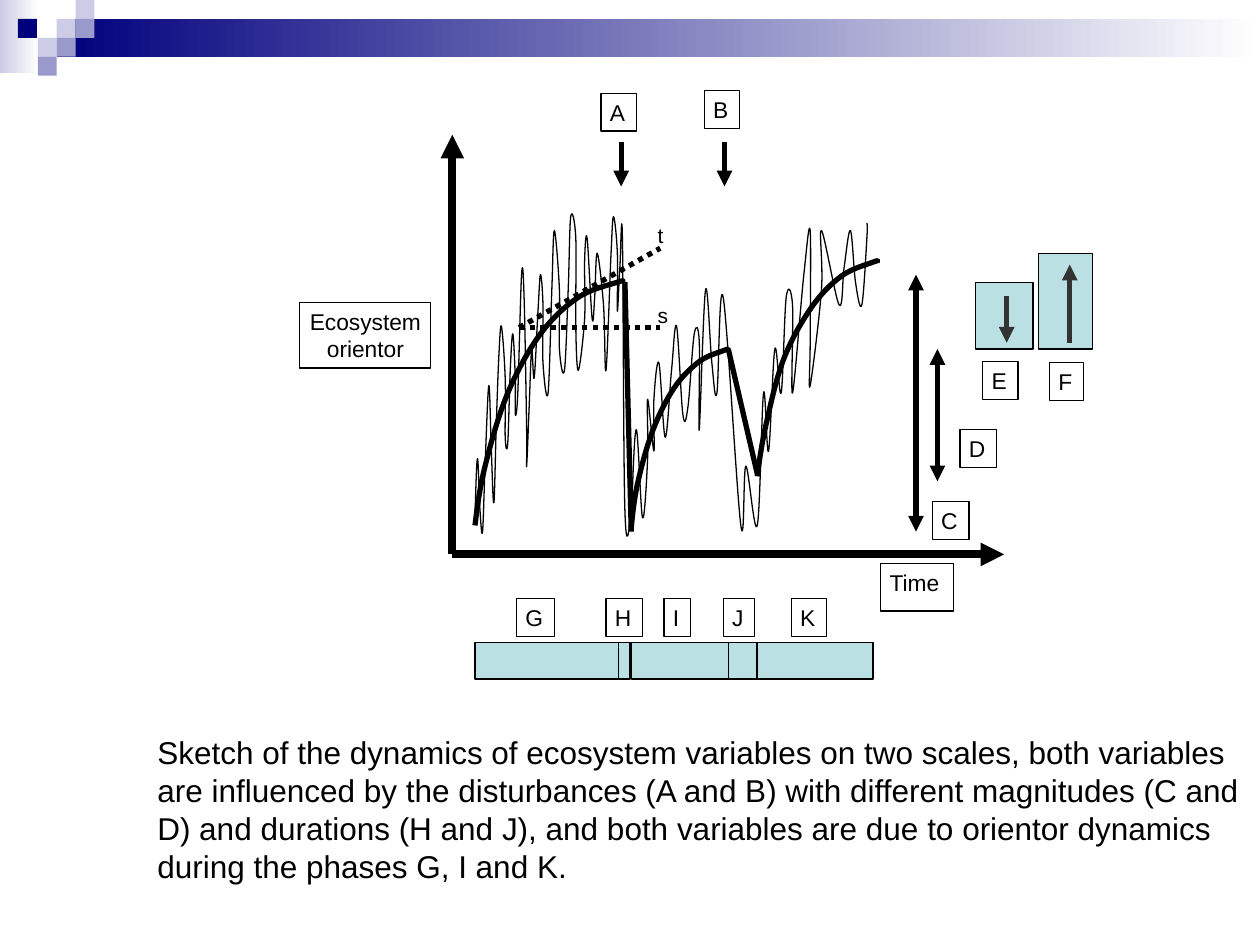
from dataclasses import dataclass

from lxml import etree
from pptx import Presentation
from pptx.dml.color import RGBColor
from pptx.enum.dml import MSO_LINE
from pptx.enum.shapes import MSO_CONNECTOR, MSO_SHAPE
from pptx.enum.text import PP_ALIGN
from pptx.oxml.ns import qn
from pptx.util import Inches, Pt

RECTANGLE, STRAIGHT = MSO_SHAPE.RECTANGLE, MSO_CONNECTOR.STRAIGHT
DOTTED, LEFT, CENTER = MSO_LINE.ROUND_DOT, PP_ALIGN.LEFT, PP_ALIGN.CENTER
COLORS = {"ink": "000000", "gray": "333333", "aqua": "BBE0E3", "white": "FFFFFF",
          "navy": "00007D", "violet": "9999CC", "lilac": "CCCCE6"}
CELL = Inches(0.1)  # the slide is a grid of 100 columns and 75 rows

# Curve knots as (column, row) within the plot box
FLUCTUATION_BEFORE = [
    (7.7, 31.1), (7.9, 26.4), (8.1, 30.5), (8.3, 32.2), (8.5, 27), (8.8, 20.6), (9, 25.8),
    (9.2, 29.9), (9.4, 23.5), (9.6, 18.2), (9.8, 15.9), (10.1, 20), (10.1, 24.7), (10.3, 25.2),
    (10.5, 19.4), (10.7, 16.5), (10.9, 20), (10.9, 22.9), (11.1, 21.2), (11.4, 11.8),
    (11.6, 13.6), (11.8, 24.1), (11.8, 27), (12, 22.3), (12.2, 17.7), (12.4, 20), (12.7, 14.7),
    (12.9, 11.8), (13.1, 14.2), (13.1, 18.8), (13.5, 21.2), (13.8, 13), (14, 8.3), (14.4, 13),
    (14.4, 17.7), (14.8, 19.4), (15.1, 13), (15.3, 7.2), (15.7, 8.9), (15.7, 15.9),
    (15.9, 19.4), (16.4, 15.3), (16.4, 10.7), (16.6, 8.9), (17, 15.3), (17.2, 13.6),
    (17.4, 10.1), (17.9, 14.2), (18.1, 19.4), (18.5, 10.1), (18.7, 7.2), (19, 10.1),
    (19, 14.7), (19.2, 11.2), (19.4, 8.9), (19.6, 30.5), (20.1, 30.5)]
FLUCTUATION_AFTER = [
    (20.1, 31.7), (20.5, 24.1), (21, 31.1), (21.4, 26.4), (21.4, 21.7), (21.9, 25.8),
    (21.9, 21.7), (22.3, 18.8), (22.8, 24.7), (23.3, 19.4), (23.7, 15.9), (24.2, 22.9),
    (24.6, 22.3), (25.1, 16.5), (25.5, 17.1), (25.5, 24.1), (26, 13), (26.5, 18.8),
    (26.9, 21.2), (27.4, 13.6), (28.8, 31.7), (29.2, 27), (30.1, 31.7), (30.6, 21.2),
    (31, 25.8), (31.5, 17.7), (32, 21.2), (32.4, 13.6), (32.9, 14.2), (32.9, 21.2),
    (33.8, 11.8), (34.3, 8.3), (34.3, 17.1), (34.3, 20.6), (35.2, 13), (35.2, 8.3),
    (36.6, 14.2), (37, 11.2), (37.5, 8.3), (37.9, 12.4), (38.4, 14.2), (38.8, 8.9),
    (38.8, 7.7)]
TRENDS = [
    [(7.7, 31.7), (8.5, 27), (10.3, 21.2), (12.9, 16.5), (15.9, 13.6), (19, 12.4), (19.4, 12.4)],
    [(20.1, 31.9), (20.6, 28.4), (21.8, 24.2), (23.5, 20.8), (25.5, 18.7), (27.5, 17.8),
     (27.7, 17.8)],
    [(30.1, 27.8), (30.8, 23.7), (32.2, 18.5), (34.4, 14.4), (36.8, 11.9), (39.3, 10.8),
     (39.6, 10.8)]]


@dataclass
class Region:
    """A part of the slide whose places are counted in grid cells from its corner."""
    shapes: object
    column: float
    row: float
    columns: float
    rows: float

    def point(self, column, row):
        return round((self.column + column) * CELL), round((self.row + row) * CELL)

    def frame(self, column, row, columns, rows):
        return *self.point(column, row), round(columns * CELL), round(rows * CELL)


def color(name):
    return RGBColor.from_string(COLORS[name])


def set_line(line, width, name="ink"):
    line.color.rgb = color(name)
    line.width = Pt(width)


def add_block(region, place, fill, fade=False, outline=True):
    shape = region.shapes.add_shape(RECTANGLE, *region.frame(*place))
    shape.shadow.inherit = False
    if fade:
        shape.fill.gradient()
        shape.fill.gradient_angle = 0
        for stop, name, position in zip(shape.fill.gradient_stops, (fill, "white"), (0, 1)):
            stop.color.rgb = color(name)
            stop.position = position
    else:
        shape.fill.solid()
        shape.fill.fore_color.rgb = color(fill)
    if outline:
        set_line(shape.line, 0.75)
    else:
        shape.line.fill.background()


def add_text(region, place, lines, size=13, boxed=True, align=LEFT, wrap=False):
    shape = region.shapes.add_textbox(*region.frame(*place))
    frame = shape.text_frame
    side, edge = (0.07, 0.04) if boxed else (0.1, 0.05)
    layout = {"word_wrap": wrap, "margin_left": Inches(side), "margin_right": Inches(side),
              "margin_top": Inches(edge), "margin_bottom": Inches(edge)}
    for name, value in layout.items():
        setattr(frame, name, value)
    if boxed:
        set_line(shape.line, 0.75)
    frame.text = "\n".join(lines)
    for paragraph in frame.paragraphs:
        paragraph.alignment = align
        for name, value in {"name": "Arial", "size": Pt(size)}.items():
            setattr(paragraph.font, name, value)
        paragraph.font.color.rgb = color("ink")


def add_line(region, start, end, width=3, name="ink", heads=(), dash=None):
    connector = region.shapes.add_connector(STRAIGHT, *region.point(*start), *region.point(*end))
    set_line(connector.line, width, name)
    if dash:
        connector.line.dash_style = dash
    properties = connector._element.spPr
    for head in heads:
        etree.SubElement(properties.find(qn("a:ln")), qn(f"a:{head}"), type="triangle")
    etree.SubElement(properties, qn("a:effectLst"))


def middle(first, second):
    return tuple((a + b) / 2 for a, b in zip(first, second))


def bezier_points(knots):
    """Two control points and an end for each span, with Catmull-Rom tangents."""
    tangents = [tuple((c - a) / 6 for a, c in zip(*pair)) for pair in zip(knots, knots[2:])]
    leaving = [tuple(map(sum, zip(*pair))) for pair in zip(knots[1:], tangents)]
    arriving = [tuple(k - t for k, t in zip(*pair)) for pair in zip(knots[1:], tangents)]
    leaving.insert(0, middle(knots[0], arriving[0]))
    arriving.append(middle(leaving[-1], knots[-1]))
    return [point for span in zip(leaving, arriving, knots[1:]) for point in span]


def add_curve(region, knots, width):
    builder = region.shapes.build_freeform(*region.point(*knots[0]))
    builder.add_line_segments([region.point(*p) for p in bezier_points(knots)], close=False)
    shape = builder.convert_to_shape()
    # Join every three line segments into one cubic curve
    segments = list(shape._element.iter(qn("a:lnTo")))
    for first, second, third in zip(segments[::3], segments[1::3], segments[2::3]):
        curve = etree.Element(qn("a:cubicBezTo"))
        first.addprevious(curve)
        for segment in (first, second, third):
            curve.append(segment[0])
            segment.getparent().remove(segment)
    shape.shadow.inherit = False
    shape.fill.background()
    set_line(shape.line, width)


def draw_header(region):
    add_block(region, (0, 0, 3.1, 5.8), "lilac", fade=True, outline=False)
    add_block(region, (4.5, 1.5, region.columns - 4.5, 3), "navy", fade=True, outline=False)
    tile = region.rows / 4
    for column, row, fill in [(3, 1, "lilac"), (4, 0, "lilac"), (4, 1, "violet"),
                              (2, 2, "lilac"), (0.95, 1, "navy"), (3, 2, "violet"),
                              (2, 3, "violet")]:
        add_block(region, (column * tile, row * tile, tile, tile), fill, outline=False)


def draw_plot(region):
    # Axes and their names
    for end in [(5.9, 0.7), (49.7, 34)]:
        add_line(region, (5.9, 34), end, width=4.5, heads=["tailEnd"])
    add_text(region, (39.9, 34.7, 5.8, 3.8), ["Time"])
    add_text(region, (-6.2, 14, 10.4, 5.2), ["Ecosystem", "orientor"], align=CENTER)
    # Slow trends, fast fluctuations and the two collapses
    for knots in TRENDS:
        add_curve(region, knots, 3)
    for knots in (FLUCTUATION_BEFORE, FLUCTUATION_AFTER):
        add_curve(region, knots, 0.75)
    add_line(region, (19.6, 12.4), (20.1, 32.2))
    add_line(region, (27.8, 17.7), (30.1, 27.6))
    # Disturbances
    for letter, column, row in [("A", 19.3, -2.6), ("B", 27.5, -2.8)]:
        add_text(region, (column - 1.6, row, 2.8, 3), [letter])
        add_line(region, (column, 1.3), (column, 4.8), heads=["tailEnd"])
    # Dotted tangents
    for letter, end_row, text_row in [("s", 16, 13.5), ("t", 9.7, 7.2)]:
        add_line(region, (11.2, 16), (22.4, end_row), dash=DOTTED)
        add_text(region, (21.2, text_row, 3.8, 2.5), [letter], size=12, boxed=False, wrap=True)


def draw_magnitudes(region):
    for column, top, bottom in [(2.7, 1.8, 22.2), (4.4, 7.7, 18.2)]:
        add_line(region, (column, top), (column, bottom), heads=["headEnd", "tailEnd"])
    for place, arrow_column, arrow_top, head in [
            ((7.4, 2.4, 4.6, 5.3), 9.9, 3.5, "tailEnd"),
            ((12.4, 0.1, 4.3, 7.6), 14.9, 1, "headEnd")]:
        add_block(region, place, "aqua")
        add_line(region, (arrow_column, arrow_top), (arrow_column, 7.2), name="gray", heads=[head])
    for letter, column, row, width in [("C", 4, 19.8, 2.9), ("D", 6.2, 14.1, 2.9),
                                       ("E", 8, 8.7, 2.8), ("F", 13.3, 8.8, 2.7)]:
        add_text(region, (column, row, width, 3), [letter])


def draw_phases(region):
    for letter, start, width, text_start, text_width in [
            ("G", 0, 11.9, 3.3, 3), ("H", 11.4, 0.9, 10.4, 2.9), ("I", 12.4, 7.8, 15, 2.1),
            ("J", 20.1, 2.3, 19.7, 2.5), ("K", 22.4, 9.2, 25.1, 2.8)]:
        add_block(region, (start, 3.5, width, 2.9), "aqua")
        add_text(region, (text_start, 0, text_width, 3), [letter])


def draw_caption(region):
    add_text(region, (0, 0, region.columns, region.rows), [
        "Sketch of the dynamics of ecosystem variables on two scales, both variables are "
        "influenced by the disturbances (A and B) with different magnitudes (C and D) and "
        "durations (H and J), and both variables are due to orientor dynamics during the "
        "phases G, I and K."], size=18, boxed=False, wrap=True)


def main():
    presentation = Presentation()
    presentation.slide_width, presentation.slide_height = 100 * CELL, 75 * CELL
    shapes = presentation.slides.add_slide(presentation.slide_layouts[6]).shapes
    for draw, box in [(draw_header, (0, 0, 100, 6)), (draw_plot, (30, 10, 50, 35)),
                      (draw_magnitudes, (70, 20, 17, 23)), (draw_phases, (37.7, 47.5, 32, 7)),
                      (draw_caption, (11.5, 57.7, 88.5, 13.1))]:
        draw(Region(shapes, *box))
    presentation.save("out.pptx")


if __name__ == "__main__":
    main()
